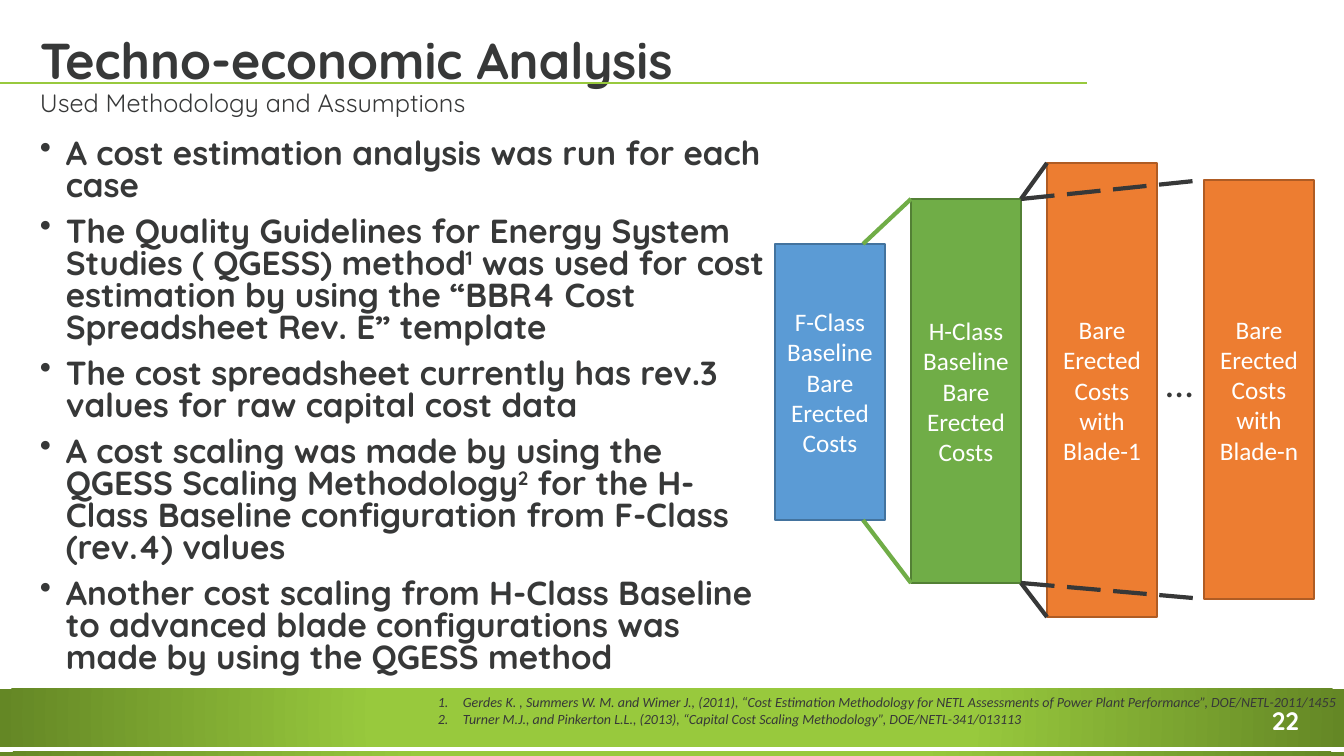
from lxml.etree import SubElement
from pptx import Presentation
from pptx.dml.color import RGBColor
from pptx.enum.dml import MSO_LINE
from pptx.enum.shapes import MSO_CONNECTOR, MSO_SHAPE
from pptx.enum.text import MSO_ANCHOR, PP_ALIGN
from pptx.oxml.ns import qn
from pptx.util import Emu, Pt

PX = 914400 / 100.8
COLORS = {
    "lime": "98C93D", "moss": "648725", "ink": "373838", "white": "FFFFFF",
    "blue": "5B9BD5", "blue edge": "43739E",
    "green": "70AD47", "green edge": "538035",
    "orange": "ED7D31", "orange edge": "AF5C24",
}
RGB = {name: RGBColor.from_string(value) for name, value in COLORS.items()}


def px(*lengths):
    return [Emu(round(length * PX)) for length in lengths]


def write(frame, *texts, size, font="Quicksand", color="ink", bold=False, italic=False,
          align=PP_ALIGN.LEFT, anchor=MSO_ANCHOR.TOP, wrap=True, spacing=None,
          before=0, indent=0, bullet=None):
    """Fill a text frame, one paragraph per text; parts between ^ marks are superscript."""
    frame.word_wrap = wrap
    frame.vertical_anchor = anchor
    for number, text in enumerate(texts):
        para = frame.add_paragraph() if number else frame.paragraphs[0]
        if bullet:
            properties = para._p.get_or_add_pPr()
            properties.set("marL", str(px(indent)[0]))
            properties.set("indent", str(-px(indent)[0]))
            tag, attribute, value = bullet
            SubElement(properties, qn(tag)).set(attribute, value)
        para.alignment = align
        if spacing:
            para.line_spacing = spacing
        if number:
            para.space_before = Pt(before)
        for part, piece in enumerate(text.split("^")):
            span = para.add_run()
            span.text = piece
            span.font.name = font
            span.font.size = Pt(size)
            span.font.bold = bold
            span.font.italic = italic
            span.font.color.rgb = RGB[color]
            if part % 2:
                span._r.get_or_add_rPr().set("baseline", "30000")


deck = Presentation()
deck.slide_width, deck.slide_height = px(1344, 756)
page = deck.slides.add_slide(deck.slide_layouts[6])
shapes = page.shapes

# Footer band and strip with a radial gradient
for top, height, inner_stop in [(689, 58, 0.44), (752, 4, 0.37)]:
    band = shapes.add_shape(MSO_SHAPE.RECTANGLE, *px(0, top, 1344, height))
    band.shadow.inherit = False
    band.line.fill.background()
    band.fill.gradient()
    for stop, position, color in zip(band.fill.gradient_stops, (inner_stop, 1), ("lime", "moss")):
        stop.position = position
        stop.color.rgb = RGB[color]
    gradient = band._element.spPr.find(qn("a:gradFill"))
    gradient.remove(gradient.find(qn("a:lin")))
    radial = SubElement(gradient, qn("a:path"))
    radial.set("path", "circle")
    center = SubElement(radial, qn("a:fillToRect"))
    for side in "ltrb":
        center.set(side, "50000")

# Headings and body
number_box = shapes.add_textbox(*px(1262, 700, 48, 40))
write(number_box.text_frame, "22", size=18, color="white", bold=True, wrap=False)

title_box = shapes.add_textbox(*px(30, 28, 1277, 67))
write(title_box.text_frame, "Techno-economic Analysis", size=36, bold=True,
      anchor=MSO_ANCHOR.BOTTOM, spacing=0.9)

subtitle_box = shapes.add_textbox(*px(30, 86, 1277, 41))
write(subtitle_box.text_frame, "Used Methodology and Assumptions", size=18, spacing=0.9)

body_box = shapes.add_textbox(*px(30, 135, 756, 559))
write(
    body_box.text_frame,
    "A cost estimation analysis was run for each case",
    "The Quality Guidelines for Energy System Studies ( QGESS) method^1^ was used for cost "
    "estimation by using the “BBR4 Cost Spreadsheet Rev. E” template",
    "The cost spreadsheet currently has rev.3 values for raw capital cost data",
    "A cost scaling was made by using the QGESS Scaling Methodology^2^ for the H-Class "
    "Baseline configuration from F-Class (rev.4) values",
    "Another cost scaling from H-Class Baseline to advanced blade configurations was made "
    "by using the QGESS method",
    size=23.8, bold=True, spacing=0.8, before=10, indent=26, bullet=("a:buChar", "char", "•"),
)

# Cost bars
BARS = [
    (775, 244, 276, "blue", "F-Class Baseline Bare Erected Costs"),
    (911, 199, 384, "green", "H-Class Baseline Bare Erected Costs"),
    (1047, 163, 454, "orange", "Bare Erected Costs with Blade-1"),
    (1204, 180, 419, "orange", "Bare Erected Costs with Blade-n"),
]
for left, top, height, color, label in BARS:
    bar = shapes.add_shape(MSO_SHAPE.RECTANGLE, *px(left, top, 110, height))
    bar.shadow.inherit = False
    bar.fill.solid()
    bar.fill.fore_color.rgb = RGB[color]
    bar.line.color.rgb = RGB[color + " edge"]
    bar.line.width = Pt(1)
    write(bar.text_frame, label, size=18, font="Calibri", color="white",
          align=PP_ALIGN.CENTER, anchor=MSO_ANCHOR.MIDDLE)

dots_box = shapes.add_textbox(*px(1156, 353, 38, 57))
write(dots_box.text_frame, "…", size=28, font="Calibri")

# Title rule and scaling lines
LINES = [
    (0, 83, 1087, 83, "lime", 1.75, None),
    (863, 244, 911, 199, "green", 3, None),
    (863, 520, 911, 583, "green", 3, None),
    (1021, 199, 1047, 163, "ink", 3, None),
    (1021, 583, 1047, 617, "ink", 3, None),
    (1021, 199, 1204, 180, "ink", 3, MSO_LINE.LONG_DASH),
    (1021, 583, 1204, 599, "ink", 3, MSO_LINE.LONG_DASH),
]
for *ends, color, width, dash in LINES:
    line = shapes.add_connector(MSO_CONNECTOR.STRAIGHT, *px(*ends))
    line.line.color.rgb = RGB[color]
    line.line.width = Pt(width)
    if dash:
        line.line.dash_style = dash
    SubElement(line._element.spPr, qn("a:effectLst"))

# References
reference_box = shapes.add_textbox(*px(428, 689, 916, 44))
reference_box.text_frame.margin_right = 0
write(
    reference_box.text_frame,
    "Gerdes K. , Summers W. M. and Wimer J., (2011), “Cost Estimation Methodology for NETL "
    "Assessments of Power Plant Performance”, DOE/NETL-2011/1455",
    "Turner M.J., and Pinkerton L.L., (2013), “Capital Cost Scaling Methodology”, "
    "DOE/NETL-341/013113",
    size=10, font="Calibri", italic=True, indent=25,
    bullet=("a:buAutoNum", "type", "arabicPeriod"),
)

deck.save("out.pptx")
